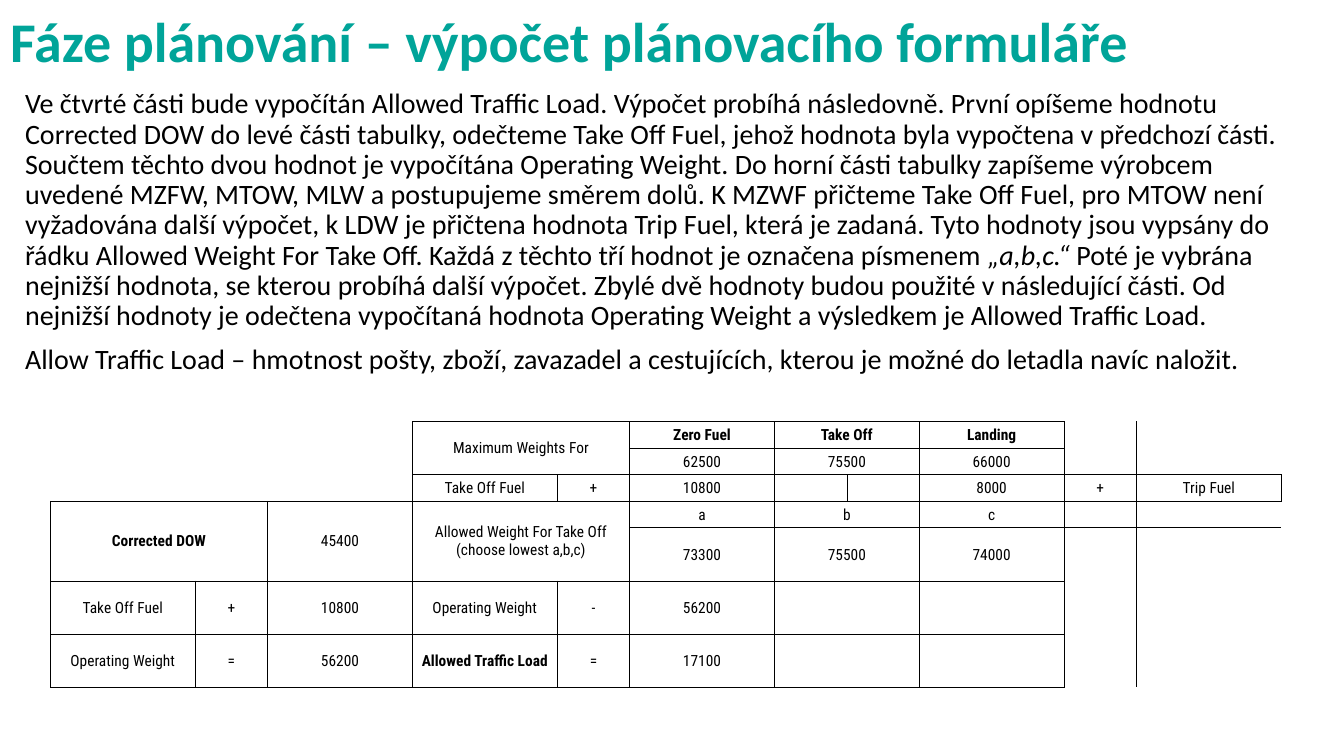
from lxml import etree
from pptx import Presentation
from pptx.dml.color import RGBColor
from pptx.enum.text import MSO_ANCHOR, PP_ALIGN
from pptx.oxml.ns import qn
from pptx.util import Inches, Pt

MIDDLE, BOTTOM = MSO_ANCHOR.MIDDLE, MSO_ANCHOR.BOTTOM
LEFT, CENTER = PP_ALIGN.LEFT, PP_ALIGN.CENTER
TITLE_ONLY = 5
W, H = 13.33, 7.5
UNIT, ROW_H = 12.21 / 17, 0.264
COL_UNITS = [1, 1, 1, 1, 1, 2, 1, 2, 1, 1, 2, 1, 1, 1]
ROWS = 10
NO_GRID_STYLE = "{2D5ABB26-0587-4C30-8999-92F81FD0307C}"
SIDES = {"a:lnL": (0, -1), "a:lnR": (0, 1), "a:lnT": (-1, 0), "a:lnB": (1, 0)}
BOLD = {"Zero Fuel", "Take Off", "Landing", "Corrected DOW", "Allowed Traffic Load"}

TITLE = "Fáze plánování – výpočet plánovacího formuláře"
INTRO = [
    ("Ve čtvrté části bude vypočítán Allowed Traffic Load. Výpočet probíhá následovně. "
     "První opíšeme hodnotu Corrected DOW do levé části tabulky, odečteme Take Off Fuel, "
     "jehož hodnota byla vypočtena v předchozí části. Součtem těchto dvou hodnot je "
     "vypočítána Operating Weight. Do horní části tabulky zapíšeme výrobcem uvedené MZFW, "
     "MTOW, MLW a postupujeme směrem dolů. K MZWF přičteme Take Off Fuel, pro MTOW není "
     "vyžadována další výpočet, k LDW je přičtena hodnota Trip Fuel, která je zadaná. "
     "Tyto hodnoty jsou vypsány do řádku Allowed Weight For Take Off. Každá z těchto tří "
     "hodnot je označena písmenem ", False),
    ("„a,b,c.“ ", True),
    ("Poté je vybrána nejnižší hodnota, se kterou probíhá další výpočet. Zbylé dvě hodnoty "
     "budou použité v následující části. Od nejnižší hodnoty je odečtena vypočítaná hodnota "
     "Operating Weight a výsledkem je Allowed Traffic Load.", False),
]
DEFINITION = [
    ("Allow Traffic Load – hmotnost pošty, zboží, zavazadel a cestujících, kterou je možné "
     "do letadla navíc naložit.", False),
]

# row, column, row span, column span, text
BLOCKS = [
    (0, 5, 2, 2, "Maximum Weights For"),
    (0, 7, 1, 1, "Zero Fuel"), (0, 8, 1, 2, "Take Off"), (0, 10, 1, 1, "Landing"),
    (1, 7, 1, 1, "62500"), (1, 8, 1, 2, "75500"), (1, 10, 1, 1, "66000"),
    (2, 5, 1, 1, "Take Off Fuel"), (2, 6, 1, 1, "+"), (2, 7, 1, 1, "10800"),
    (2, 8, 1, 1, ""), (2, 9, 1, 1, ""), (2, 10, 1, 1, "8000"),
    (2, 11, 1, 1, "+"), (2, 12, 1, 2, "Trip Fuel"),
    (3, 0, 3, 3, "Corrected DOW"), (3, 3, 3, 2, "45400"),
    (3, 5, 3, 2, "Allowed Weight For Take Off\v(choose lowest a,b,c)"),
    (3, 7, 1, 1, "a"), (3, 8, 1, 2, "b"), (3, 10, 1, 1, "c"),
    (4, 7, 2, 1, "73300"), (4, 8, 2, 2, "75500"), (4, 10, 2, 1, "74000"),
    (6, 0, 2, 2, "Take Off Fuel"), (6, 2, 2, 1, "+"), (6, 3, 2, 2, "10800"),
    (6, 5, 2, 1, "Operating Weight"), (6, 6, 2, 1, "-"), (6, 7, 2, 1, "56200"),
    (6, 8, 2, 2, ""), (6, 10, 2, 1, ""),
    (8, 0, 2, 2, "Operating Weight"), (8, 2, 2, 1, "="), (8, 3, 2, 2, "56200"),
    (8, 5, 2, 1, "Allowed Traffic Load"), (8, 6, 2, 1, "="), (8, 7, 2, 1, "17100"),
    (8, 8, 2, 2, ""), (8, 10, 2, 1, ""),
]


def color(value):
    return RGBColor.from_string(value)


def style(p, font, size, hex_color="000000", bold=False, align=LEFT):
    p.alignment = align
    p.font.name, p.font.size, p.font.bold = font, Pt(size), bold
    p.font.color.rgb = color(hex_color)


def add_title(s):
    title = s.shapes.title
    title.left, title.top = 0, 0
    title.width, title.height = Inches(12.91), Inches(0.79)
    tf = title.text_frame
    tf.text = TITLE
    tf.word_wrap = True
    tf.vertical_anchor = BOTTOM
    tf.paragraphs[0].line_spacing = 0.9
    style(tf.paragraphs[0], "Calibri", 40, "00A499", bold=True)


def add_body(s, paragraphs):
    tf = s.shapes.add_textbox(Inches(0.15), Inches(0.84), Inches(12.91), Inches(3.2)).text_frame
    tf.word_wrap = True
    for i, runs in enumerate(paragraphs):
        p = tf.add_paragraph() if i else tf.paragraphs[0]
        p.line_spacing, p.space_before = 0.9, Pt(10)
        style(p, "Calibri", 20)
        for text, italic in runs:
            r = p.add_run()
            r.text = text
            if italic:
                r.font.italic = True


def add_border(cell, side):
    tc_pr = cell._tc.get_or_add_tcPr()
    ln = etree.SubElement(tc_pr, qn(side), w=str(Pt(0.5)))
    fill = etree.SubElement(ln, qn("a:solidFill"))
    etree.SubElement(fill, qn("a:srgbClr"), val="000000")


def format_cell(cell, sides, bold):
    cell.margin_left = cell.margin_right = cell.margin_top = Inches(0.01)
    cell.margin_bottom = 0
    cell.vertical_anchor = MIDDLE
    style(cell.text_frame.paragraphs[0], "Roboto Condensed", 11, bold=bold, align=CENTER)
    for side in sides:
        add_border(cell, side)
    cell.fill.background()


def add_weight_table(s):
    frame = s.shapes.add_table(ROWS, len(COL_UNITS), Inches(0.5), Inches(4.18),
                               Inches(UNIT * sum(COL_UNITS)), Inches(ROW_H * ROWS))
    table = frame.table
    table.first_row = table.horz_banding = False
    frame._element.find(".//" + qn("a:tableStyleId")).text = NO_GRID_STYLE
    for col, units in zip(table.columns, COL_UNITS):
        col.width = Inches(UNIT * units)
    for row in table.rows:
        row.height = Inches(ROW_H)

    boxed = set()
    for row, col, down, across, text in BLOCKS:
        cell = table.cell(row, col)
        cell.text = text
        if down * across > 1:
            cell.merge(table.cell(row + down - 1, col + across - 1))
        boxed |= {(row + i, col + j) for i in range(down) for j in range(across)}

    for row in range(ROWS):
        for col in range(len(COL_UNITS)):
            cell = table.cell(row, col)
            sides = [side for side, (dr, dc) in SIDES.items()
                     if {(row, col), (row + dr, col + dc)} & boxed]
            format_cell(cell, sides, cell.text in BOLD)


def main():
    prs = Presentation()
    prs.slide_width, prs.slide_height = Inches(W), Inches(H)
    s = prs.slides.add_slide(prs.slide_layouts[TITLE_ONLY])
    s.background.fill.solid()
    s.background.fill.fore_color.rgb = color("FFFFFF")
    add_title(s)
    add_body(s, [INTRO, DEFINITION])
    add_weight_table(s)
    prs.save("out.pptx")


if __name__ == "__main__":
    main()
